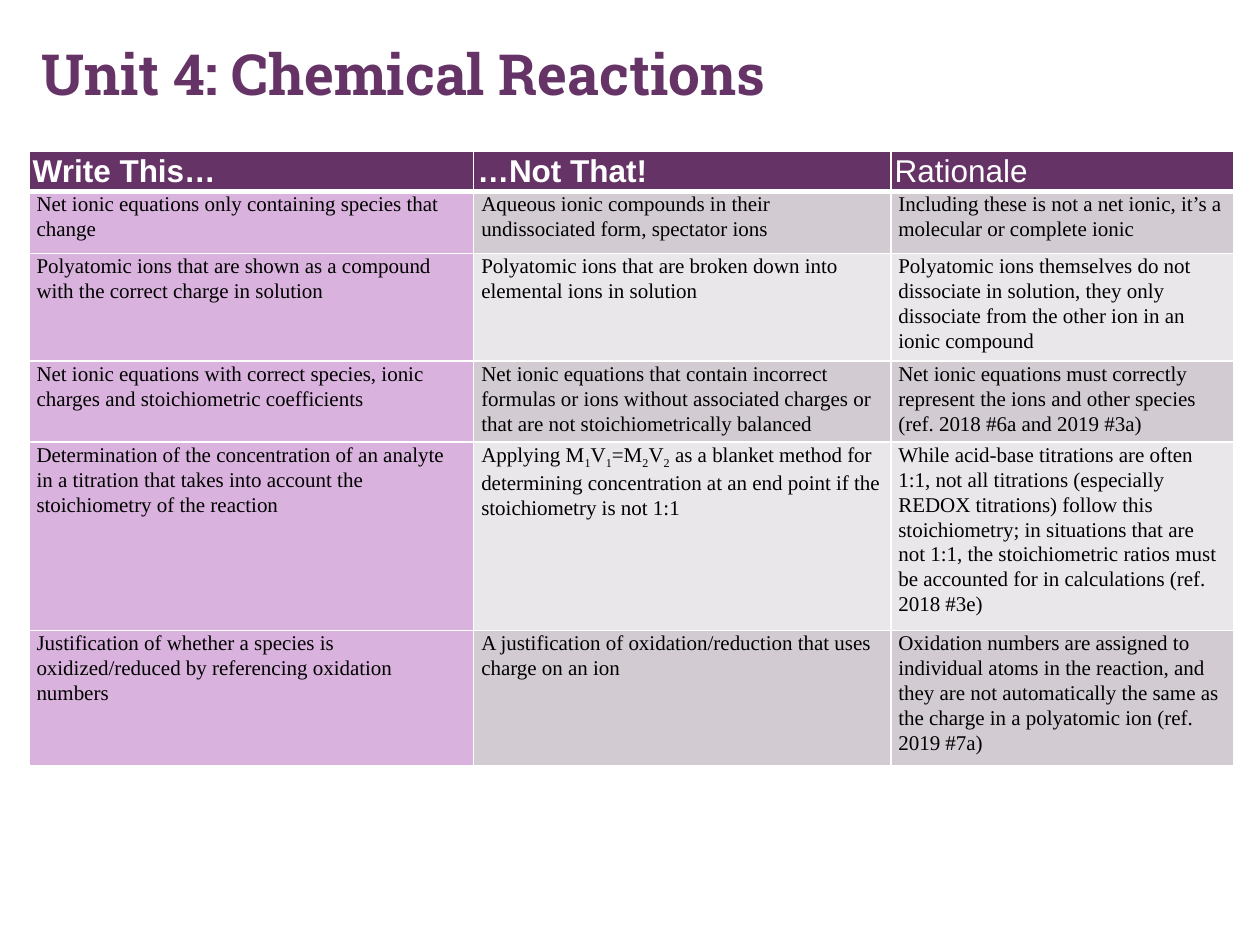
"""Build the Unit 4 chemical reactions writing-guide slide."""
from lxml.etree import SubElement
from pptx import Presentation
from pptx.dml.color import RGBColor
from pptx.enum.text import MSO_ANCHOR
from pptx.oxml.ns import qn
from pptx.util import Inches, Pt

PURPLE = RGBColor(0x66, 0x33, 0x66)
LILAC = RGBColor(0xD9, 0xB2, 0xDD)
DARK_BAND = RGBColor(0xD2, 0xCC, 0xD2)
LIGHT_BAND = RGBColor(0xEA, 0xE7, 0xEA)
WHITE = RGBColor(0xFF, 0xFF, 0xFF)
BLACK = RGBColor(0x00, 0x00, 0x00)

COLUMN_WIDTHS = [3.53, 3.31, 2.72]
ROW_HEIGHTS = [0.32, 0.49, 0.49, 0.64, 0.8, 0.64]
SUBSCRIPT_MARK = "_"
ROWS = [
    ["Write This…", "…Not That!", "Rationale"],
    ["Net ionic equations only containing species that change",
     "Aqueous ionic compounds in their undissociated form, spectator ions",
     "Including these is not a net ionic, it’s a molecular or complete ionic"],
    ["Polyatomic ions that are shown as a compound with the correct charge in solution",
     "Polyatomic ions that are broken down into elemental ions in solution",
     "Polyatomic ions themselves do not dissociate in solution, they only dissociate "
     "from the other ion in an ionic compound"],
    ["Net ionic equations with correct species, ionic charges and stoichiometric coefficients",
     "Net ionic equations that contain incorrect formulas or ions without associated "
     "charges or that are not stoichiometrically balanced",
     "Net ionic equations must correctly represent the ions and other species "
     "(ref. 2018 #6a and 2019 #3a)"],
    ["Determination of the concentration of an analyte in a titration that takes into "
     "account the stoichiometry of the reaction",
     "Applying M_1V_1=M_2V_2 as a blanket method for determining concentration at an "
     "end point if the stoichiometry is not 1:1",
     "While acid-base titrations are often 1:1, not all titrations (especially REDOX "
     "titrations) follow this stoichiometry; in situations that are not 1:1, the "
     "stoichiometric ratios must be accounted for in calculations (ref. 2018 #3e)"],
    ["Justification of whether a species is oxidized/reduced by referencing oxidation numbers",
     "A justification of oxidation/reduction that uses charge on an ion",
     "Oxidation numbers are assigned to individual atoms in the reaction, and they are "
     "not automatically the same as the charge in a polyatomic ion (ref. 2019 #7a)"],
]


def format_font(font, name, size, color, bold):
    font.name = name
    font.size = Pt(size)
    font.color.rgb = color
    font.bold = bold


def add_border(cell, side, width):
    line = SubElement(cell._tc.get_or_add_tcPr(), qn(f"a:ln{side}"), w=str(Pt(width)))
    fill = SubElement(line, qn("a:solidFill"))
    SubElement(fill, qn("a:srgbClr"), val=str(WHITE))


presentation = Presentation()
presentation.slide_width = Inches(10)
presentation.slide_height = Inches(7.5)
slide = presentation.slides.add_slide(presentation.slide_layouts[6])

title = slide.shapes.add_textbox(Inches(0.23), Inches(0.25), Inches(9.18), Inches(0.66))
title.text_frame.word_wrap = True
title.text_frame.vertical_anchor = MSO_ANCHOR.MIDDLE
title.text_frame.text = "Unit 4: Chemical Reactions"
format_font(title.text_frame.paragraphs[0].runs[0].font, "Roboto Slab", 32.4, PURPLE, True)

table = slide.shapes.add_table(
    len(ROWS), len(COLUMN_WIDTHS), Inches(0.23), Inches(1.2),
    Inches(sum(COLUMN_WIDTHS)), Inches(sum(ROW_HEIGHTS))).table
for column, width in zip(table.columns, COLUMN_WIDTHS):
    column.width = Inches(width)
for row, height in zip(table.rows, ROW_HEIGHTS):
    row.height = Inches(height)

for row_index, texts in enumerate(ROWS):
    is_header = row_index == 0
    band = DARK_BAND if row_index % 2 else LIGHT_BAND
    for column_index, text in enumerate(texts):
        cell = table.cell(row_index, column_index)
        cell.margin_left = cell.margin_right = Inches(0.03 if is_header else 0.06)
        cell.margin_top = cell.margin_bottom = 0
        add_border(cell, "L", 1)
        add_border(cell, "R", 1)
        add_border(cell, "T", 3 if row_index == 1 else 1)
        add_border(cell, "B", 3 if is_header else 1)
        cell.fill.solid()
        body_color = LILAC if column_index == 0 else band
        cell.fill.fore_color.rgb = PURPLE if is_header else body_color

        paragraph = cell.text_frame.paragraphs[0]
        paragraph.line_spacing = 1.07
        first, *rest = text.split(SUBSCRIPT_MARK)
        paragraph.add_run().text = first
        for part in rest:
            subscript = paragraph.add_run()
            subscript.text = part[0]
            subscript.font._element.set("baseline", "-25000")
            paragraph.add_run().text = part[1:]
        for run in paragraph.runs:
            if is_header:
                format_font(run.font, "Arial", 18, WHITE, column_index < 2)
            else:
                format_font(run.font, "Times New Roman", 12, BLACK, False)

presentation.save("out.pptx")
